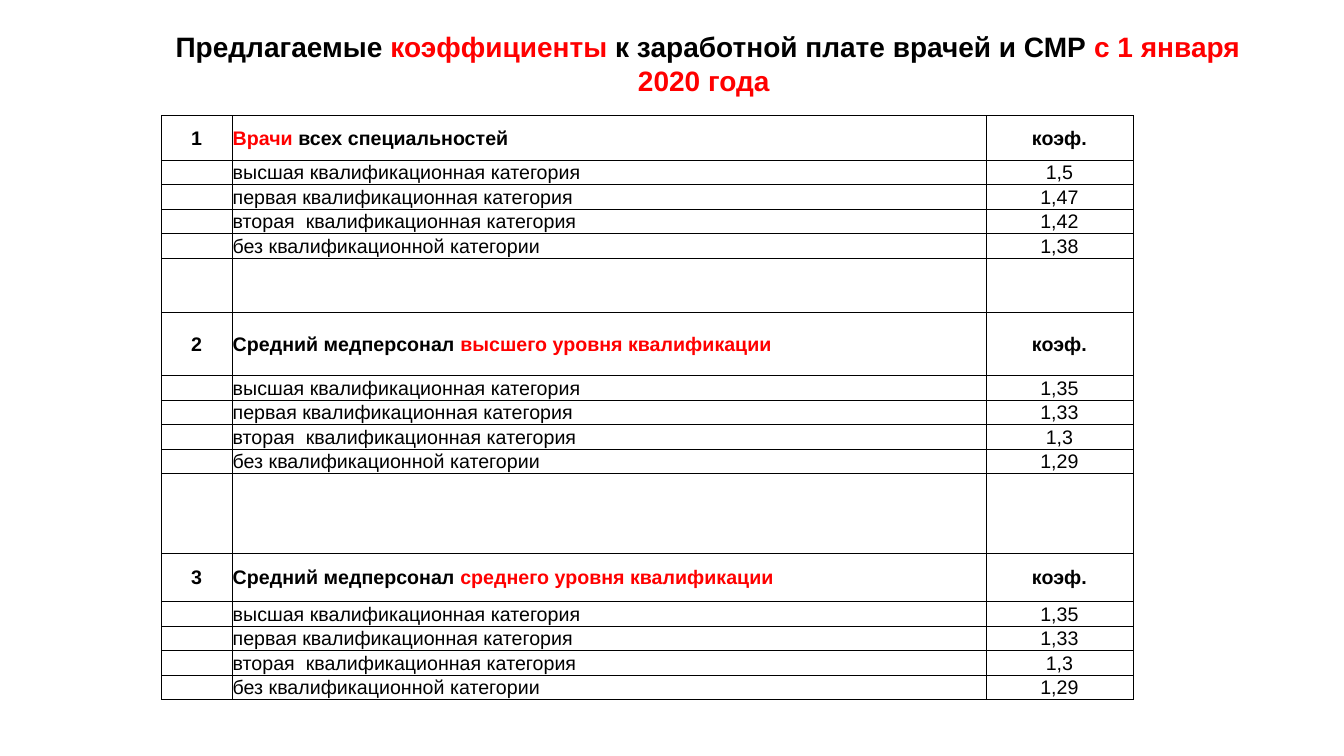
from lxml import etree
from pptx import Presentation, util as u
from pptx.dml.color import RGBColor
from pptx.enum import text
from pptx.oxml import ns

BLACK = RGBColor(0x00, 0x00, 0x00)
RED = RGBColor(0xFF, 0x00, 0x00)
WHITE = RGBColor(0xFF, 0xFF, 0xFF)
Pt = u.Pt

TITLE = [("Предлагаемые ", BLACK), ("коэффициенты", RED),
         (" к заработной плате врачей и СМР ", BLACK),
         ("с 1 января 2020 года ", RED)]
LEVELS = ["высшая квалификационная категория",
          "первая квалификационная категория",
          "вторая  квалификационная категория",
          "без квалификационной категории"]
# Heading runs, heading height, height of the gap above, coefficients
GROUPS = [
    ([("Врачи ", RED), ("всех специальностей", BLACK)],
     32, 0, ["1,5", "1,47", "1,42", "1,38"]),
    ([("Средний медперсонал", BLACK), (" высшего уровня квалификации", RED)],
     45.5, 38.5, ["1,35", "1,33", "1,3", "1,29"]),
    ([("Средний медперсонал", BLACK), (" среднего уровня квалификации", RED)],
     34.5, 57, ["1,35", "1,33", "1,3", "1,29"]),
]
WIDTHS = [50.5, 538.5, 105]
LINE = 17.5


class Page:
    def __init__(self, slide, font, size):
        self.slide, self.font, self.size = slide, font, size

    def label(self, para, runs, size, bold, center):
        para.alignment = text.PP_ALIGN.CENTER if center else text.PP_ALIGN.LEFT
        for words, color in runs:
            run = para.add_run()
            run.text = words
            run.font.name, run.font.size, run.font.bold = self.font, Pt(size), bold
            run.font.color.rgb = color
        if not runs:  # an empty cell must not stretch its row
            etree.SubElement(para._p, ns.qn("a:endParaRPr"), sz=str(size * 100))

    def title(self, runs, left, top, width, height, size):
        box = self.slide.shapes.add_textbox(Pt(left), Pt(top), Pt(width), Pt(height))
        frame = box.text_frame
        frame.word_wrap = True
        self.label(frame.paragraphs[0], runs, size, True, True)

    def border(self, cell):
        """Draw a thin black line on all four sides."""
        props = cell._tc.get_or_add_tcPr()
        for place, side in enumerate(("lnL", "lnR", "lnT", "lnB")):
            line = etree.Element(ns.qn("a:" + side), w=str(Pt(0.5)))
            fill = etree.SubElement(line, ns.qn("a:solidFill"))
            etree.SubElement(fill, ns.qn("a:srgbClr"), val=str(BLACK))
            props.insert(place, line)

    def cell(self, cell, runs, bold, center):
        cell.margin_left = cell.margin_right = cell.margin_top = Pt(0.5)
        cell.margin_bottom = 0
        cell.vertical_anchor = text.MSO_ANCHOR.MIDDLE
        cell.fill.solid()
        cell.fill.fore_color.rgb = WHITE
        self.border(cell)
        self.label(cell.text_frame.paragraphs[0], runs, self.size, bold, center)

    def table(self, rows, widths, left, top):
        """Each row is a height, a bold flag and a list of runs per cell."""
        total = sum(height for height, _, _ in rows)
        grid = self.slide.shapes.add_table(
            len(rows), len(widths), Pt(left), Pt(top), Pt(sum(widths)), Pt(total)).table
        for col, width in zip(grid.columns, widths):
            col.width = Pt(width)
        for row, (height, bold, cells) in zip(grid.rows, rows):
            row.height = Pt(height)
            for index, (cell, runs) in enumerate(zip(row.cells, cells)):
                self.cell(cell, runs, bold, index != 1)


def list_rows():
    rows = []
    for number, (head, height, gap, values) in enumerate(GROUPS, 1):
        if gap:
            rows.append((gap, False, [[], [], []]))
        rows.append((height, True, [[(str(number), BLACK)], head, [("коэф.", BLACK)]]))
        for level, value in zip(LEVELS, values):
            rows.append((LINE, False, [[], [(level, BLACK)], [(value, BLACK)]]))
    return rows


def main():
    deck = Presentation()
    deck.slide_width, deck.slide_height = Pt(960), Pt(540)
    page = Page(deck.slides.add_slide(deck.slide_layouts[6]), "Arial", 14)
    page.title(TITLE, 96, 17.5, 819, 55.5, 20)
    page.table(list_rows(), WIDTHS, 115.25, 82.5)
    deck.save("out.pptx")


if __name__ == "__main__":
    main()
